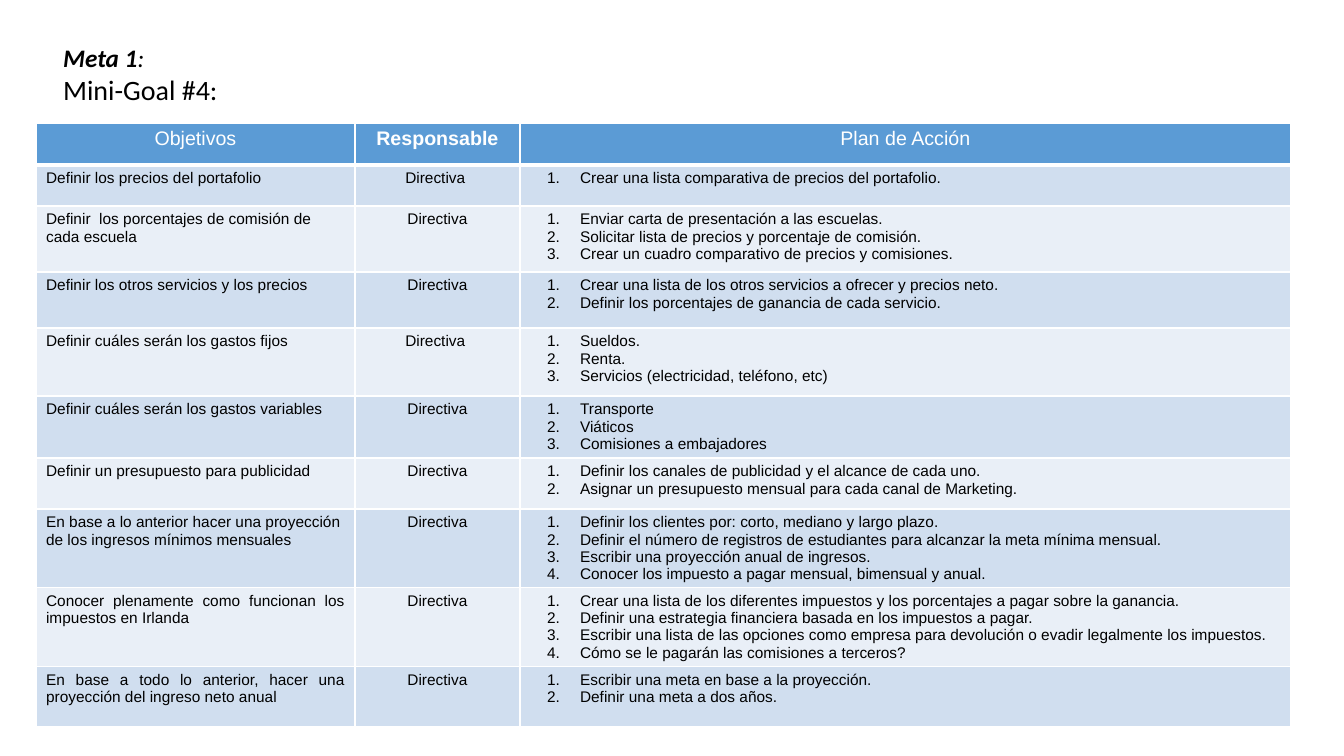
from pptx import Presentation
from pptx.dml.color import RGBColor
from pptx.enum.text import MSO_ANCHOR, MSO_AUTO_SIZE, PP_ALIGN
from pptx.oxml import parse_xml
from pptx.oxml.ns import nsdecls
from pptx.util import Emu, Pt


def px(n):
    return Emu(round(n * 914400 / 100.8))


def write(par, text, size=11, font="Arial", color="000000", bold=False,
          italic=False, align=PP_ALIGN.LEFT):
    par.alignment = align
    run = par.add_run()
    run.text = text
    run.font.size = Pt(size)
    run.font.name = font
    run.font.bold = bold
    run.font.italic = italic
    run.font.color.rgb = RGBColor.from_string(color)


LEFT, MID, JUST = PP_ALIGN.LEFT, PP_ALIGN.CENTER, PP_ALIGN.JUSTIFY
COLS = [319, 165, 771]
HEADS = [("Objetivos", False), ("Responsable", True), ("Plan de Acción", False)]
HEAD_H = 42

# Row height, goal, goal alignment, owner, steps
GOALS = [
    (41, "Definir los precios del portafolio", LEFT, "Directiva ", [
        "Crear una lista comparativa de precios del portafolio."]),
    (66, "Definir  los porcentajes de comisión de cada escuela", LEFT, "Directiva", [
        "Enviar carta de presentación a las escuelas.",
        "Solicitar lista de precios y porcentaje de comisión.",
        "Crear un cuadro comparativo de precios y comisiones."]),
    (56, "Definir los otros servicios y los precios", LEFT, "Directiva", [
        "Crear una lista de los otros servicios a ofrecer y precios neto.",
        "Definir los porcentajes de ganancia de cada servicio."]),
    (68, "Definir cuáles serán los gastos fijos", LEFT, "Directiva ", [
        "Sueldos.",
        "Renta.",
        "Servicios (electricidad, teléfono, etc)"]),
    (62, "Definir cuáles serán los gastos variables", LEFT, "Directiva", [
        "Transporte",
        "Viáticos",
        "Comisiones a embajadores"]),
    (51, "Definir un presupuesto para publicidad", LEFT, "Directiva", [
        "Definir los canales de publicidad y el alcance de cada uno.",
        "Asignar un presupuesto mensual para cada canal de Marketing."]),
    (78, "En base a lo anterior hacer una proyección de los ingresos mínimos mensuales",
     LEFT, "Directiva", [
         "Definir los clientes por: corto, mediano y largo plazo.",
         "Definir el número de registros de estudiantes para alcanzar la meta mínima mensual.",
         "Escribir una proyección anual de ingresos.",
         "Conocer los impuesto a pagar mensual, bimensual y anual."]),
    (79, "Conocer plenamente como funcionan los impuestos en Irlanda ", JUST, "Directiva", [
        "Crear una lista de los diferentes impuestos y los porcentajes a pagar sobre la ganancia.",
        "Definir una estrategia financiera basada en los impuestos a pagar.",
        "Escribir una lista de las opciones como empresa para devolución o evadir "
        "legalmente los impuestos.",
        "Cómo se le pagarán las comisiones a terceros?"]),
    (60, "En base a todo lo anterior, hacer una proyección del ingreso neto anual",
     JUST, "Directiva", [
         "Escribir una meta en base a la proyección.",
         "Definir una meta a dos años."]),
]

prs = Presentation()
prs.slide_width, prs.slide_height = px(1344), px(756)
slide = prs.slides.add_slide(prs.slide_layouts[5])

# Title
title = slide.shapes.title
title.left, title.top, title.width, title.height = px(53), px(37), px(1130), px(75)
frame = title.text_frame
frame.word_wrap = True
frame.auto_size = MSO_AUTO_SIZE.NONE
frame.vertical_anchor = MSO_ANCHOR.TOP
meta = frame.paragraphs[0]
write(meta, "Meta 1", size=18, font="Calibri", bold=True, italic=True)
write(meta, ":", size=18, font="Calibri", italic=True)
write(frame.add_paragraph(), "Mini-Goal #4:", size=20, font="Calibri")

# Table grid
highs = [HEAD_H] + [goal[0] for goal in GOALS]
table = slide.shapes.add_table(len(highs), len(COLS), px(36), px(123),
                               px(sum(COLS)), px(sum(highs))).table
for col, wide in zip(table.columns, COLS):
    col.width = px(wide)
for row, high in zip(table.rows, highs):
    row.height = px(high)

# White borders and banded fills
for r, row in enumerate(table.rows):
    fill = "5B9BD5" if r == 0 else "D0DEEF" if r % 2 else "E9EFF7"
    for cell in row.cells:
        props = cell._tc.get_or_add_tcPr()
        for side in "LRTB":
            thick = 3 if (r, side) in [(0, "B"), (1, "T")] else 1
            props.append(parse_xml(
                f'<a:ln{side} {nsdecls("a")} w="{Pt(thick)}"><a:solidFill>'
                f'<a:srgbClr val="FFFFFF"/></a:solidFill></a:ln{side}>'))
        cell.fill.solid()
        cell.fill.fore_color.rgb = RGBColor.from_string(fill)

# Table text
for c, (head, bold) in enumerate(HEADS):
    write(table.cell(0, c).text_frame.paragraphs[0], head, size=14,
          color="FFFFFF", bold=bold, align=MID)

for r, (high, goal, align, owner, steps) in enumerate(GOALS, 1):
    write(table.cell(r, 0).text_frame.paragraphs[0], goal, align=align)
    write(table.cell(r, 1).text_frame.paragraphs[0], owner, align=MID)
    plan = table.cell(r, 2).text_frame
    for i, step in enumerate(steps):
        par = plan.add_paragraph() if i else plan.paragraphs[0]
        write(par, step)
        props = par._p.get_or_add_pPr()
        props.set("marL", str(px(50)))
        props.set("indent", str(px(-33)))
        props.append(parse_xml(
            f'<a:buClr {nsdecls("a")}><a:srgbClr val="000000"/></a:buClr>'))
        props.append(parse_xml(
            f'<a:buAutoNum {nsdecls("a")} type="arabicPeriod"/>'))

prs.save("out.pptx")
